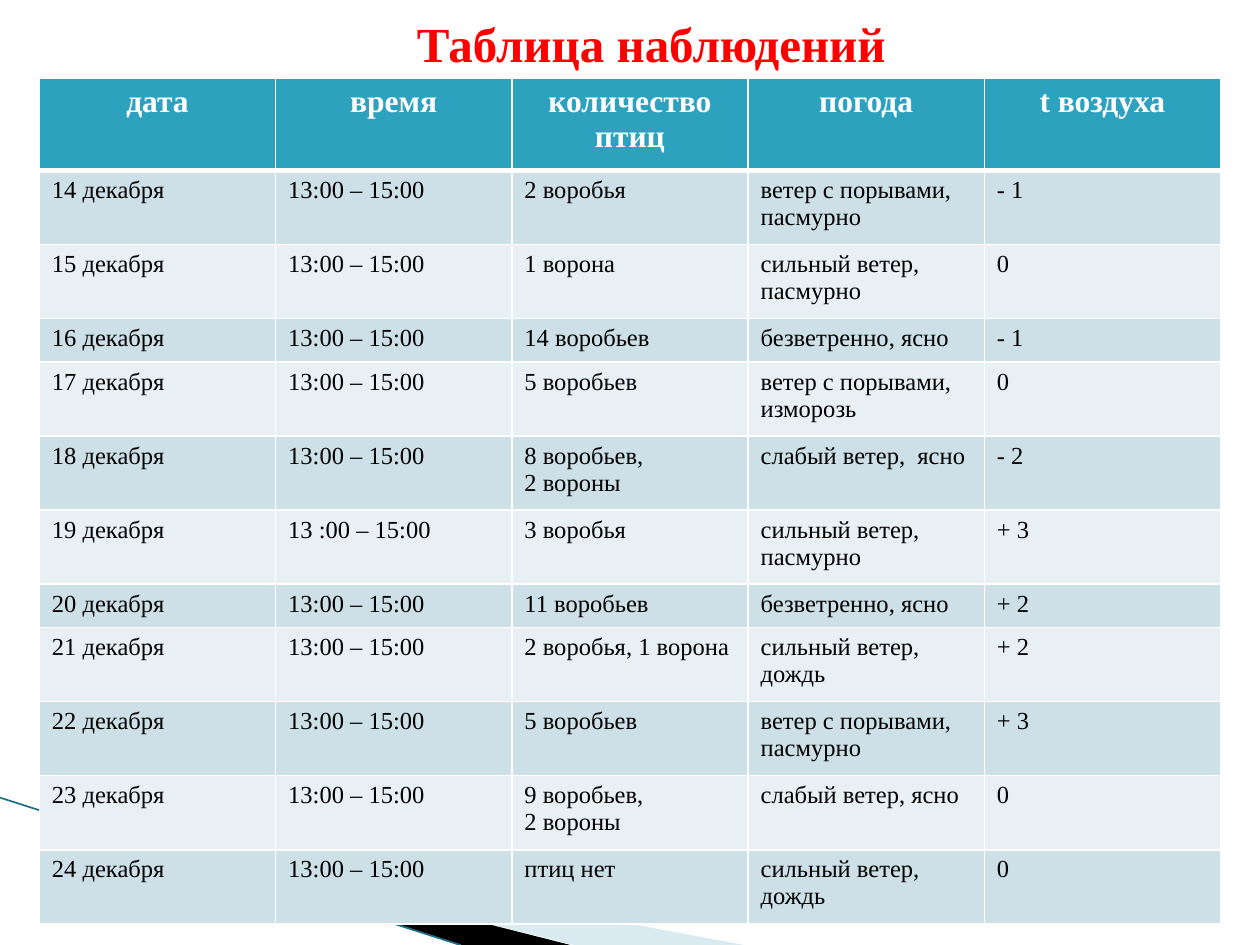
from lxml import etree
from pptx import Presentation
from pptx.dml.color import RGBColor
from pptx.enum.shapes import MSO_CONNECTOR
from pptx.enum.text import MSO_ANCHOR, MSO_AUTO_SIZE, PP_ALIGN
from pptx.oxml.ns import qn
from pptx.util import Pt

LINE = MSO_CONNECTOR.STRAIGHT
TOP, FIXED = MSO_ANCHOR.TOP, MSO_AUTO_SIZE.NONE
LEFT, CENTER = PP_ALIGN.LEFT, PP_ALIGN.CENTER

TITLE = "Таблица наблюдений"
HEADS = ["дата", "время", "количество птиц", "погода", "t воздуха"]
HOURS = "13:00 – 15:00"
DAYS = [
    ("14 декабря", HOURS, "2 воробья", "ветер с порывами, пасмурно", "- 1"),
    ("15 декабря", HOURS, "1 ворона", "сильный ветер, пасмурно", "0"),
    ("16 декабря", HOURS, "14 воробьев", "безветренно, ясно", "- 1"),
    ("17 декабря", HOURS, "5 воробьев", "ветер с порывами,\nизморозь", "0"),
    ("18 декабря", HOURS, "8 воробьев,\n2 вороны", "слабый ветер,  ясно", "- 2"),
    ("19 декабря", "13 :00 – 15:00", "3 воробья", "сильный ветер, пасмурно", "+ 3"),
    ("20 декабря", HOURS, "11 воробьев", "безветренно, ясно", "+ 2"),
    ("21 декабря", HOURS, "2 воробья, 1 ворона", "сильный ветер, дождь", "+ 2"),
    ("22 декабря", HOURS, "5 воробьев", "ветер с порывами, пасмурно", "+ 3"),
    ("23 декабря", HOURS, "9 воробьев,\n2 вороны", "слабый ветер, ясно", "0"),
    ("24 декабря", HOURS, "птиц нет", "сильный ветер, дождь", "0"),
]
SHORT = {"16 декабря", "20 декабря"}

COLORS = {
    "title": "FF0000", "head": "2DA2BF", "odd": "CDE0E8", "even": "E8F0F4",
    "white": "FFFFFF", "black": "000000", "pale": "A0CBDC", "teal": "1B6F84",
}
FONTS = {
    "title": {"name": "Times New Roman", "size": Pt(28), "bold": True},
    "head": {"name": "Times New Roman", "size": Pt(18), "bold": True},
    "body": {"name": "Times New Roman", "size": Pt(14), "bold": False},
}

# Corner decoration: fill, opacity in percent, outline points
WEDGES = [
    ("pale", 40, [(39.6, 468), (425, 540), (328, 540)]),
    ("black", 100, [(38, 467), (326, 540), (264, 540)]),
]
EDGE = (0, 455.8, 263, 540)

X, Y, WIDTH = 22.5, 44.8, 675
HEAD_H, TALL_H, SHORT_H = 52.5, 42.3, 25


def color(name):
    return RGBColor.from_string(COLORS[name])


def write(frame, text, style, ink, align):
    frame.text = text
    for para in frame.paragraphs:
        para.alignment = align
        for key, value in FONTS[style].items():
            setattr(para.font, key, value)
        para.font.color.rgb = color(ink)


def border(cell, base):
    """Draw white cell borders, with the given bottom width in points."""
    props = cell._tc.get_or_add_tcPr()
    for i, (side, width) in enumerate(zip("LRTB", (1, 1, 1, base))):
        line = etree.Element(qn(f"a:ln{side}"), w=str(Pt(width)))
        fill = etree.SubElement(line, qn("a:solidFill"))
        etree.SubElement(fill, qn("a:srgbClr"), val=COLORS["white"])
        props.insert(i, line)


def add_title(slide):
    box = slide.shapes.title
    box.left, box.top, box.width, box.height = Pt(0), Pt(0), Pt(736), Pt(444)
    frame = box.text_frame
    form = {"auto_size": FIXED, "vertical_anchor": TOP, "word_wrap": True,
            "margin_top": Pt(7.6), "margin_left": Pt(15.5)}
    for key, value in form.items():
        setattr(frame, key, value)
    write(frame, TITLE, "title", "title", CENTER)


def add_corner(slide):
    for ink, alpha, points in WEDGES:
        path = slide.shapes.build_freeform(*points[0], scale=Pt(1))
        path.add_line_segments(points[1:], close=True)
        wedge = path.convert_to_shape()
        wedge.shadow.inherit = False
        wedge.line.fill.background()
        wedge.fill.solid()
        wedge.fill.fore_color.rgb = color(ink)
        if alpha < 100:
            tint = wedge._element.spPr.find(".//" + qn("a:srgbClr"))
            etree.SubElement(tint, qn("a:alpha"), val=str(alpha * 1000))
    edge = slide.shapes.add_connector(LINE, *map(Pt, EDGE))
    edge.line.color.rgb = color("teal")
    edge.line.width = Pt(0.95)
    etree.SubElement(edge._element.spPr, qn("a:effectLst"))


def add_grid(slide):
    rows = [HEADS, *DAYS]
    sizes = [HEAD_H] + [SHORT_H if day[0] in SHORT else TALL_H for day in DAYS]
    grid = slide.shapes.add_table(
        len(rows), len(HEADS), Pt(X), Pt(Y), Pt(WIDTH), Pt(sum(sizes))).table
    for col in grid.columns:
        col.width = Pt(WIDTH / len(HEADS))
    for r, (row, size) in enumerate(zip(rows, sizes)):
        grid.rows[r].height = Pt(size)
        if r == 0:
            back, style, ink, align, base = "head", "head", "white", CENTER, 3
        else:
            back = "odd" if r % 2 else "even"
            style, ink, align, base = "body", "black", LEFT, 1
        for c, text in enumerate(row):
            cell = grid.cell(r, c)
            cell.fill.solid()
            cell.fill.fore_color.rgb = color(back)
            write(cell.text_frame, text, style, ink, align)
            border(cell, base)
            if r == 1:
                top = cell._tc.tcPr.find(qn("a:lnT"))
                top.set("w", str(Pt(3)))


def main():
    deck = Presentation()
    deck.slide_width, deck.slide_height = Pt(720), Pt(540)
    slide = deck.slides.add_slide(deck.slide_layouts[5])
    add_title(slide)
    add_corner(slide)
    add_grid(slide)
    deck.save("out.pptx")


if __name__ == "__main__":
    main()
